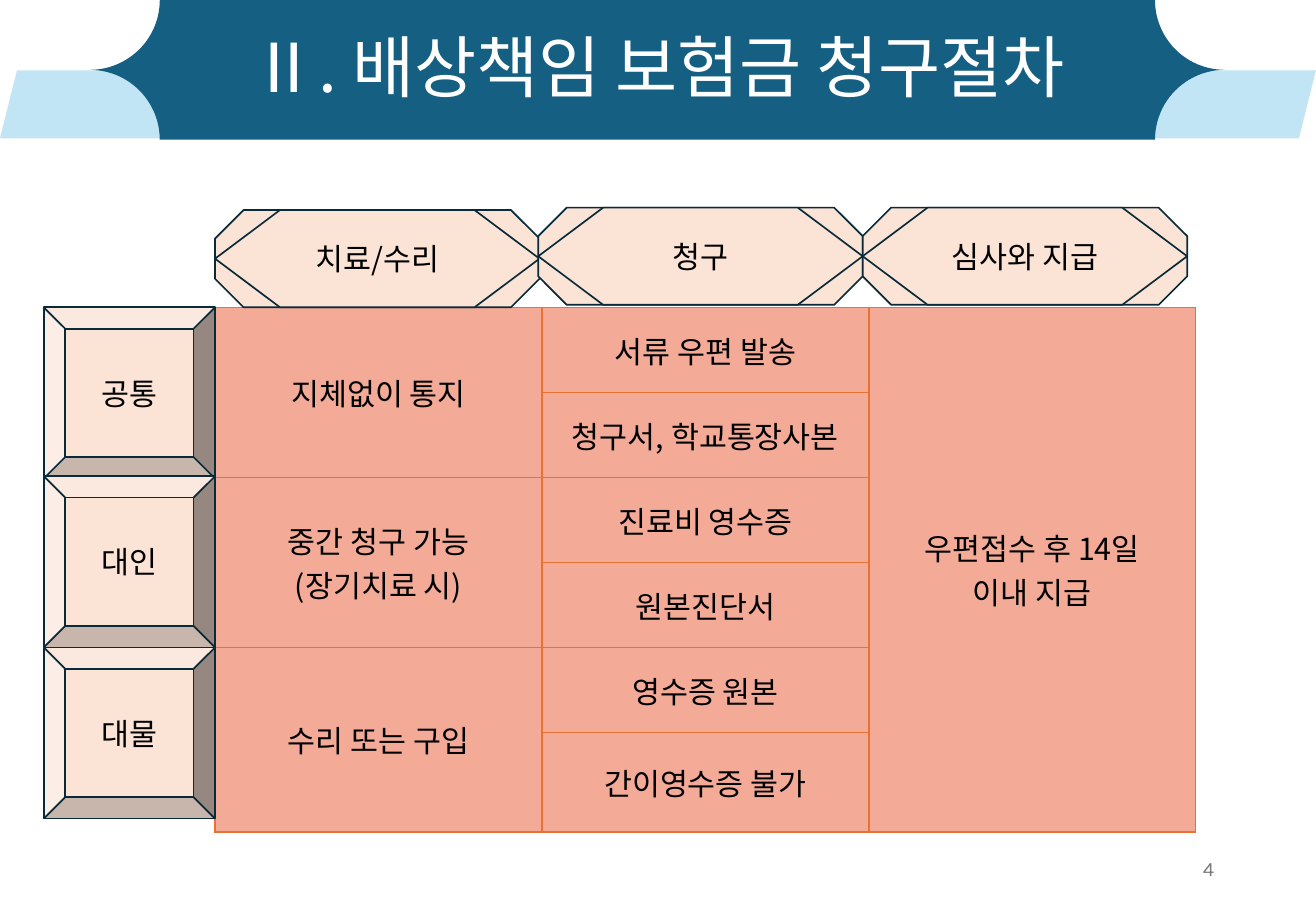
from lxml.etree import SubElement as Sub
from pptx import Presentation
from pptx.dml.color import RGBColor as Rgb
from pptx.enum.shapes import MSO_SHAPE as Kind
from pptx.enum.text import MSO_ANCHOR as Anchor, MSO_AUTO_SIZE as Fit, PP_ALIGN as Align
from pptx.oxml.ns import qn
from pptx.util import Pt

PX = 9144  # one px is 1/100 inch

theme = {
    "font": "Noto Sans CJK KR", "num": "Karla",
    "dark": "156082", "pale": "C1E5F5", "cream": "FBE3D6", "edge": "092A39",
    "cell": "F3AB97", "rule": "E97132",
    "white": "FFFFFF", "black": "000000", "grey": "797979",
    "head": 40, "body": 18, "foot": 12,
}


def write(frame, text, size="body", color="black", face="font", align=Align.CENTER):
    frame.text = text
    for para in frame.paragraphs:
        para.alignment = align
        for run in para.runs:
            look = {"size": Pt(theme[size]), "name": theme[face], "bold": False}
            for key, value in look.items():
                setattr(run.font, key, value)
            run.font.color.rgb = Rgb.from_string(theme[color])
            Sub(run._r.rPr, qn("a:ea"), typeface=theme[face])


def draw(kind, box, fill, line=None, text=None):
    shape = slide.shapes.add_shape(kind, *(n * PX for n in box))
    shape.shadow.inherit = False
    shape.fill.solid()
    shape.fill.fore_color.rgb = Rgb.from_string(theme[fill])
    if line:
        shape.line.color.rgb = Rgb.from_string(theme[line])
        shape.line.width = Pt(1)
    else:
        shape.line.fill.background()
    if text:
        shape.text_frame.vertical_anchor = Anchor.MIDDLE
        write(shape.text_frame, text)
    return shape


deck = Presentation()
deck.slide_width, deck.slide_height = 1083 * PX, 750 * PX
slide = deck.slides.add_slide(deck.slide_layouts[5])

# Banner
draw(Kind.PARALLELOGRAM, (0, 58, 1083, 56), "pale")
plaque = draw(Kind.PLAQUE, (74, 0, 934, 115), "dark")
plaque.adjustments[0] = 0.5

# Title, in front of the banner
title = slide.shapes.title
place = {"left": 138, "top": -14, "width": 807, "height": 145}
for key, value in place.items():
    setattr(title, key, value * PX)
frame = title.text_frame
format = {"auto_size": Fit.NONE, "word_wrap": True, "vertical_anchor": Anchor.MIDDLE}
for key, value in format.items():
    setattr(frame, key, value)
write(frame, "Ⅱ. 배상책임 보험금 청구절차", "head", "white")
frame.paragraphs[0].line_spacing = 0.9
plaque._element.addnext(title._element)

# Page number
page = slide.shapes.add_textbox(765 * PX, 695 * PX, 244 * PX, 40 * PX).text_frame
page.word_wrap = True
page.vertical_anchor = Anchor.MIDDLE
write(page, "4", "foot", "grey", "num", Align.RIGHT)

# Table of steps
rows = [70] * 5 + [82]
grid = slide.shapes.add_table(6, 3, 177 * PX, 253 * PX, 807 * PX, sum(rows) * PX).table
grid.first_row = grid.horz_banding = False
for col in grid.columns:
    col.width = 269 * PX
for row, high in zip(grid.rows, rows):
    row.height = high * PX
for cell in grid.iter_cells():
    props = cell._tc.get_or_add_tcPr()
    for side in ("lnL", "lnR", "lnT", "lnB"):
        edge = Sub(props, qn(f"a:{side}"), w=str(Pt(1)))
        Sub(Sub(edge, qn("a:solidFill")), qn("a:srgbClr"), val=theme["rule"])
    cell.fill.solid()
    cell.fill.fore_color.rgb = Rgb.from_string(theme["cell"])

# Cell words: column, rows per cell, texts
words = [
    (0, 2, ["지체없이 통지", "중간 청구 가능\n(장기치료 시)", "수리 또는 구입"]),
    (1, 1, ["서류 우편 발송", "청구서, 학교통장사본", "진료비 영수증",
            "원본진단서", "영수증 원본", "간이영수증 불가"]),
    (2, 6, ["우편접수 후 14일\n이내 지급"]),
]
for col, span, texts in words:
    for i, text in enumerate(texts):
        cell = grid.cell(i * span, col)
        if span > 1:
            cell.merge(grid.cell(i * span + span - 1, col))
        cell.vertical_anchor = Anchor.MIDDLE
        write(cell.text_frame, text)

# Column heads
for left, top, text in [(177, 173, "치료/수리"), (443, 171, "청구"), (710, 171, "심사와 지급")]:
    box = (left, top, 267, 80)
    draw(Kind.OCTAGON, box, "cream", "edge")
    draw(Kind.FLOWCHART_PREPARATION, box, "cream", "edge", text)

# Row heads
for top, text in [(253, "공통"), (392, "대인"), (533, "대물")]:
    draw(Kind.BEVEL, (36, top, 141, 141), "cream", "edge", text)

deck.save("out.pptx")
